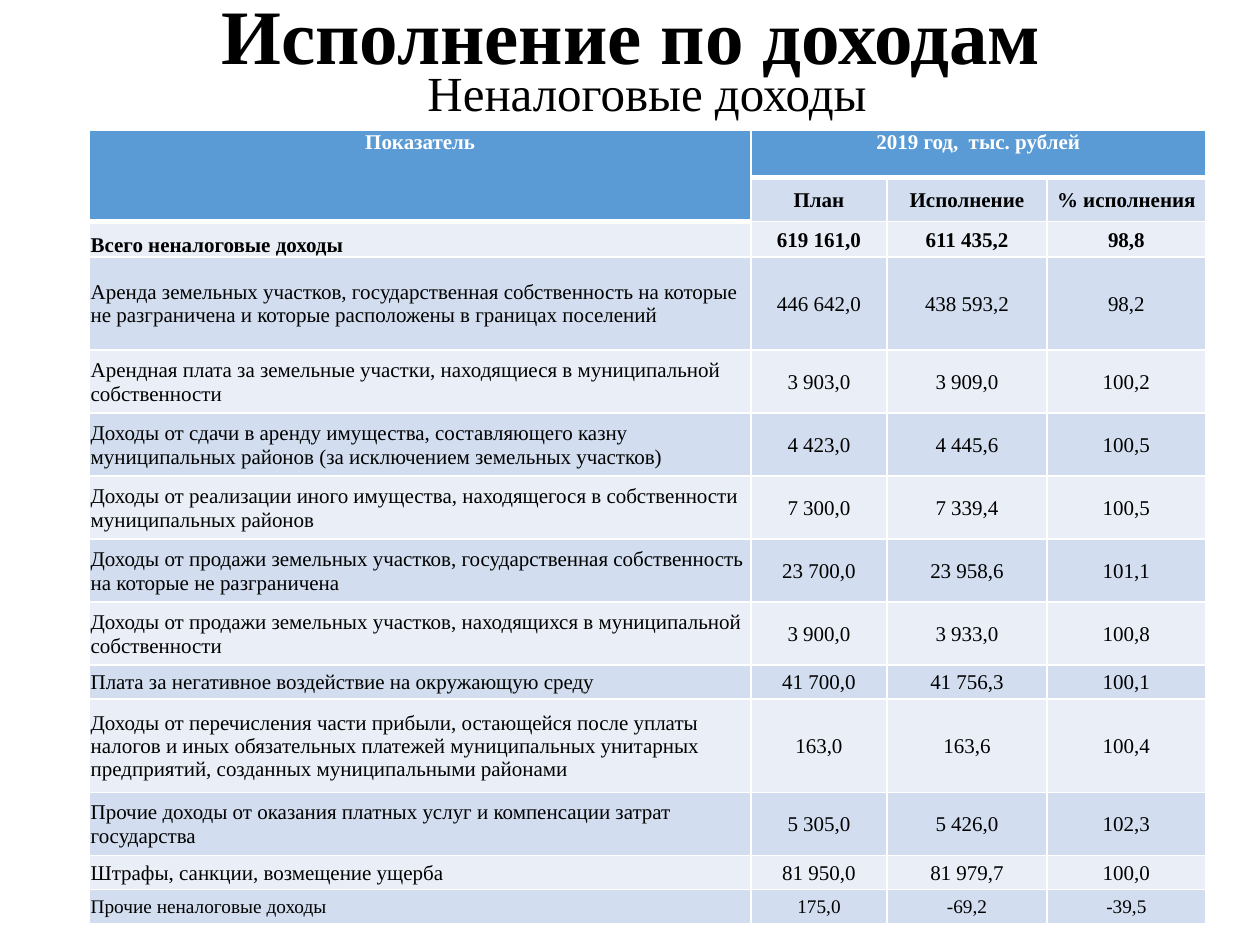
from dataclasses import dataclass

from lxml.etree import SubElement
from pptx import Presentation
from pptx.dml.color import RGBColor
from pptx.enum.text import MSO_ANCHOR, PP_ALIGN
from pptx.oxml.ns import qn
from pptx.util import Inches, Pt

FONT = "Times New Roman"
BLACK = RGBColor(0x00, 0x00, 0x00)
WHITE = RGBColor(0xFF, 0xFF, 0xFF)
HEADER_BLUE = RGBColor(0x5B, 0x9B, 0xD5)
BAND_DARK = RGBColor(0xD2, 0xDE, 0xEF)
BAND_LIGHT = RGBColor(0xEA, 0xEF, 0xF7)

COLUMN_WIDTHS = (5.25, 1.08, 1.27, 1.26)
HEADER_HEIGHTS = (0.38, 0.35)


@dataclass(frozen=True)
class Heading:
    text: str
    left: float
    top: float
    width: float
    height: float
    size: int
    bold: bool = False


@dataclass(frozen=True)
class Income:
    name: str
    plan: str
    actual: str
    percent: str
    height: float = 0.5
    size: int = 12
    bold: bool = False
    name_anchor: MSO_ANCHOR = MSO_ANCHOR.MIDDLE


@dataclass(frozen=True)
class CellStyle:
    fill: RGBColor
    color: RGBColor = BLACK
    size: int = 12
    bold: bool = False
    align: PP_ALIGN = PP_ALIGN.CENTER
    anchor: MSO_ANCHOR = MSO_ANCHOR.MIDDLE
    bottom_border: int = 1


HEADINGS = (
    Heading("Исполнение по доходам", 0.7, -0.15, 8.62, 0.92, 44, True),
    Heading("Неналоговые доходы", 0.55, 0.48, 9.17, 0.55, 28),
)

INCOMES = (
    Income("Всего неналоговые доходы", "619 161,0", "611 435,2", "98,8",
           height=0.28, bold=True, name_anchor=MSO_ANCHOR.BOTTOM),
    Income("Аренда земельных участков, государственная собственность на которые "
           "не разграничена и которые расположены в границах поселений",
           "446 642,0", "438 593,2", "98,2", height=0.74),
    Income("Арендная плата за земельные участки, находящиеся в муниципальной "
           "собственности", "3 903,0", "3 909,0", "100,2"),
    Income("Доходы от сдачи в аренду имущества, составляющего казну "
           "муниципальных районов (за исключением земельных участков)",
           "4 423,0", "4 445,6", "100,5"),
    Income("Доходы от реализации иного имущества, находящегося в собственности "
           "муниципальных районов", "7 300,0", "7 339,4", "100,5"),
    Income("Доходы от продажи земельных участков, государственная собственность "
           "на которые не разграничена", "23 700,0", "23 958,6", "101,1"),
    Income("Доходы от продажи земельных участков, находящихся в муниципальной "
           "собственности", "3 900,0", "3 933,0", "100,8"),
    Income("Плата за негативное воздействие на окружающую среду",
           "41 700,0", "41 756,3", "100,1", height=0.27),
    Income("Доходы от перечисления части прибыли, остающейся после уплаты "
           "налогов и иных обязательных платежей муниципальных унитарных "
           "предприятий, созданных муниципальными районами",
           "163,0", "163,6", "100,4", height=0.74),
    Income("Прочие доходы от оказания платных услуг и компенсации затрат "
           "государства", "5 305,0", "5 426,0", "102,3"),
    Income("Штрафы, санкции, возмещение ущерба",
           "81 950,0", "81 979,7", "100,0", height=0.27),
    Income("Прочие неналоговые доходы", "175,0", "-69,2", "-39,5",
           height=0.27, size=11),
)


def format_text(p, size: int, bold: bool, color: RGBColor, align: PP_ALIGN) -> None:
    p.alignment = align
    for r in p.runs:
        r.font.name = FONT
        r.font.size = Pt(size)
        r.font.bold = bold
        r.font.color.rgb = color


def add_heading(s, heading: Heading) -> None:
    box = s.shapes.add_textbox(Inches(heading.left), Inches(heading.top),
                               Inches(heading.width), Inches(heading.height))
    tf = box.text_frame
    tf.word_wrap = True
    tf.vertical_anchor = MSO_ANCHOR.MIDDLE
    tf.text = heading.text
    p = tf.paragraphs[0]
    p.line_spacing = 0.9
    format_text(p, heading.size, heading.bold, BLACK, PP_ALIGN.CENTER)


def add_borders(cell, bottom: int) -> None:
    tc_pr = cell._tc.get_or_add_tcPr()
    for side, width in (("L", 1), ("R", 1), ("T", 1), ("B", bottom)):
        line = SubElement(tc_pr, qn(f"a:ln{side}"), w=str(Pt(width)))
        fill = SubElement(line, qn("a:solidFill"))
        SubElement(fill, qn("a:srgbClr"), val=str(WHITE))


def style_cell(cell, text: str, style: CellStyle) -> None:
    add_borders(cell, style.bottom_border)
    cell.fill.solid()
    cell.fill.fore_color.rgb = style.fill
    cell.margin_left = cell.margin_right = cell.margin_top = Inches(0.01)
    cell.margin_bottom = Inches(0)
    cell.vertical_anchor = style.anchor
    cell.text_frame.text = text
    format_text(cell.text_frame.paragraphs[0], style.size, style.bold,
                style.color, style.align)


def fill_header(table) -> None:
    top = CellStyle(HEADER_BLUE, WHITE, bold=True, anchor=MSO_ANCHOR.TOP,
                    bottom_border=3)
    sub = CellStyle(BAND_DARK, bold=True)
    for col, text in enumerate(("Показатель", "2019 год,  тыс. рублей", "", "")):
        style_cell(table.cell(0, col), text, top)
    for col, text in enumerate(("", "План", "Исполнение", "% исполнения")):
        style_cell(table.cell(1, col), text, sub if col else top)
    table.cell(0, 0).merge(table.cell(1, 0))
    table.cell(0, 1).merge(table.cell(0, 3))


def fill_income(table, row: int, income: Income) -> None:
    band = BAND_DARK if row % 2 else BAND_LIGHT
    name_style = CellStyle(band, size=income.size, bold=income.bold,
                           align=PP_ALIGN.LEFT, anchor=income.name_anchor)
    value_style = CellStyle(band, size=income.size, bold=income.bold)
    style_cell(table.cell(row, 0), income.name, name_style)
    for col, value in enumerate((income.plan, income.actual, income.percent), 1):
        style_cell(table.cell(row, col), value, value_style)


def add_income_table(s) -> None:
    heights = HEADER_HEIGHTS + tuple(income.height for income in INCOMES)
    table = s.shapes.add_table(
        len(heights), len(COLUMN_WIDTHS), Inches(0.71), Inches(1.03),
        Inches(sum(COLUMN_WIDTHS)), Inches(sum(heights))).table
    for column, width in zip(table.columns, COLUMN_WIDTHS):
        column.width = Inches(width)
    for row, height in zip(table.rows, heights):
        row.height = Inches(height)
    fill_header(table)
    for row, income in enumerate(INCOMES, len(HEADER_HEIGHTS)):
        fill_income(table, row, income)


def main() -> None:
    prs = Presentation()
    prs.slide_width = Inches(10)
    prs.slide_height = Inches(7.5)
    s = prs.slides.add_slide(prs.slide_layouts[6])
    for heading in HEADINGS:
        add_heading(s, heading)
    add_income_table(s)
    prs.save("out.pptx")


if __name__ == "__main__":
    main()
